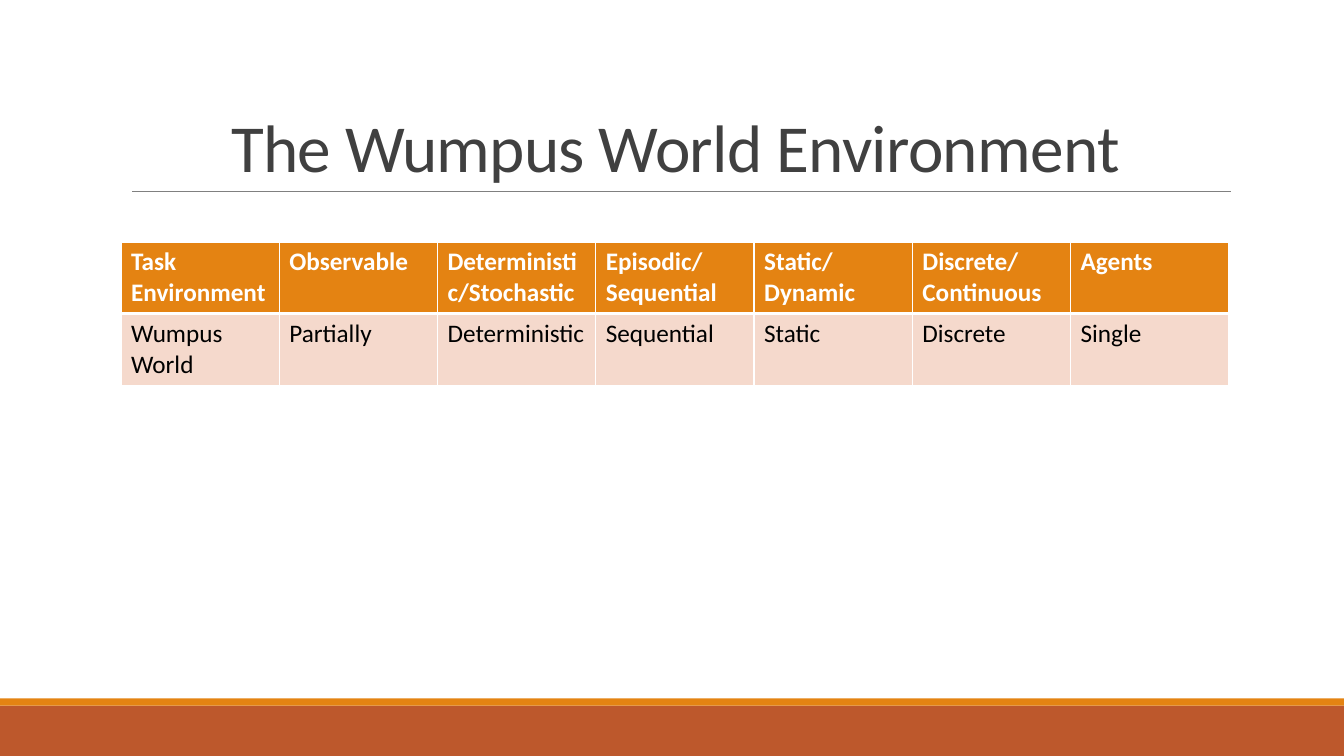
from lxml.etree import SubElement
from pptx import Presentation
from pptx.dml.color import RGBColor
from pptx.enum.shapes import MSO_CONNECTOR, MSO_SHAPE
from pptx.enum.text import MSO_ANCHOR, PP_ALIGN
from pptx.oxml.ns import qn
from pptx.util import Inches, Pt

FONT = "Calibri"
ORANGE = "E48312"
RUST = "BD582C"
PALE = "F5D9CC"
WHITE = "FFFFFF"
ENVIRONMENT = [
    ("Task Environment", "Wumpus World"),
    ("Observable", "Partially"),
    ("Deterministic/Stochastic", "Deterministic"),
    ("Episodic/Sequential", "Sequential"),
    ("Static/Dynamic", "Static"),
    ("Discrete/Continuous", "Discrete"),
    ("Agents", "Single"),
]


def color(value):
    """Turn a hex string into a colour."""
    return RGBColor.from_string(value)


def format_run(run, size, value, bold=False):
    """Set the font of a run."""
    run.font.name = FONT
    run.font.size = Pt(size)
    run.font.bold = bold
    run.font.color.rgb = color(value)


def add_bar(slide, left, top, width, height, fill):
    """Draw one flat coloured bar."""
    bar = slide.shapes.add_shape(
        MSO_SHAPE.RECTANGLE, Inches(left), Inches(top), Inches(width), Inches(height))
    bar.shadow.inherit = False
    bar.fill.solid()
    bar.fill.fore_color.rgb = color(fill)
    bar.line.fill.background()


def add_footer(slide, left, top, width, height):
    """Draw the footer band with its thin stripe on top."""
    stripe = 0.07
    add_bar(slide, left, top + stripe, width, height - stripe, RUST)
    add_bar(slide, left, top, width, stripe, ORANGE)


def add_title(slide, left, top, width, height):
    """Place the title and the rule along its lower edge."""
    title = slide.shapes.title
    title.left, title.top = Inches(left), Inches(top)
    title.width, title.height = Inches(width), Inches(height)
    frame = title.text_frame
    frame.text = "The Wumpus World Environment"
    frame.word_wrap = True
    frame.vertical_anchor = MSO_ANCHOR.BOTTOM
    paragraph = frame.paragraphs[0]
    paragraph.alignment = PP_ALIGN.CENTER
    paragraph.line_spacing = 0.85
    run = paragraph.runs[0]
    format_run(run, 48, "404040")
    run.font._element.set("spc", "-50")

    bottom = Inches(top + height)
    rule = slide.shapes.add_connector(
        MSO_CONNECTOR.STRAIGHT, Inches(left + 0.11), bottom, Inches(left + width + 0.01), bottom)
    rule.line.color.rgb = color("808080")
    rule.line.width = Pt(0.5)
    SubElement(rule._element.spPr, qn("a:effectLst"))


def set_borders(cell, top, bottom):
    """Give a cell white borders with the given top and bottom widths."""
    properties = cell._tc.get_or_add_tcPr()
    for side, width in (("L", 1), ("R", 1), ("T", top), ("B", bottom)):
        border = SubElement(properties, qn(f"a:ln{side}"), w=str(Pt(width)))
        fill = SubElement(border, qn("a:solidFill"))
        SubElement(fill, qn("a:srgbClr"), val=WHITE)


def format_cell(cell, text, is_header):
    """Write and style a header or body cell."""
    cell.text = text
    format_run(cell.text_frame.paragraphs[0].runs[0], 18,
               WHITE if is_header else "000000", is_header)
    set_borders(cell, 1 if is_header else 3, 3 if is_header else 1)
    cell.fill.solid()
    cell.fill.fore_color.rgb = color(ORANGE if is_header else PALE)


def add_environment_table(slide, left, top, width, height):
    """Place the table of environment properties."""
    table = slide.shapes.add_table(
        2, len(ENVIRONMENT), Inches(left), Inches(top), Inches(width), Inches(height)).table
    for column, texts in enumerate(ENVIRONMENT):
        for row, text in enumerate(texts):
            format_cell(table.cell(row, column), text, row == 0)


def main():
    """Build and save the slide."""
    presentation = Presentation()
    presentation.slide_width = Inches(13.33)
    presentation.slide_height = Inches(7.5)
    slide = presentation.slides.add_slide(presentation.slide_layouts[5])
    add_footer(slide, 0, 6.93, 13.33, 0.57)
    add_title(slide, 1.2, 0.31, 11, 1.59)
    add_environment_table(slide, 1.2, 2.4, 10.99, 1.4)
    presentation.save("out.pptx")


if __name__ == "__main__":
    main()
